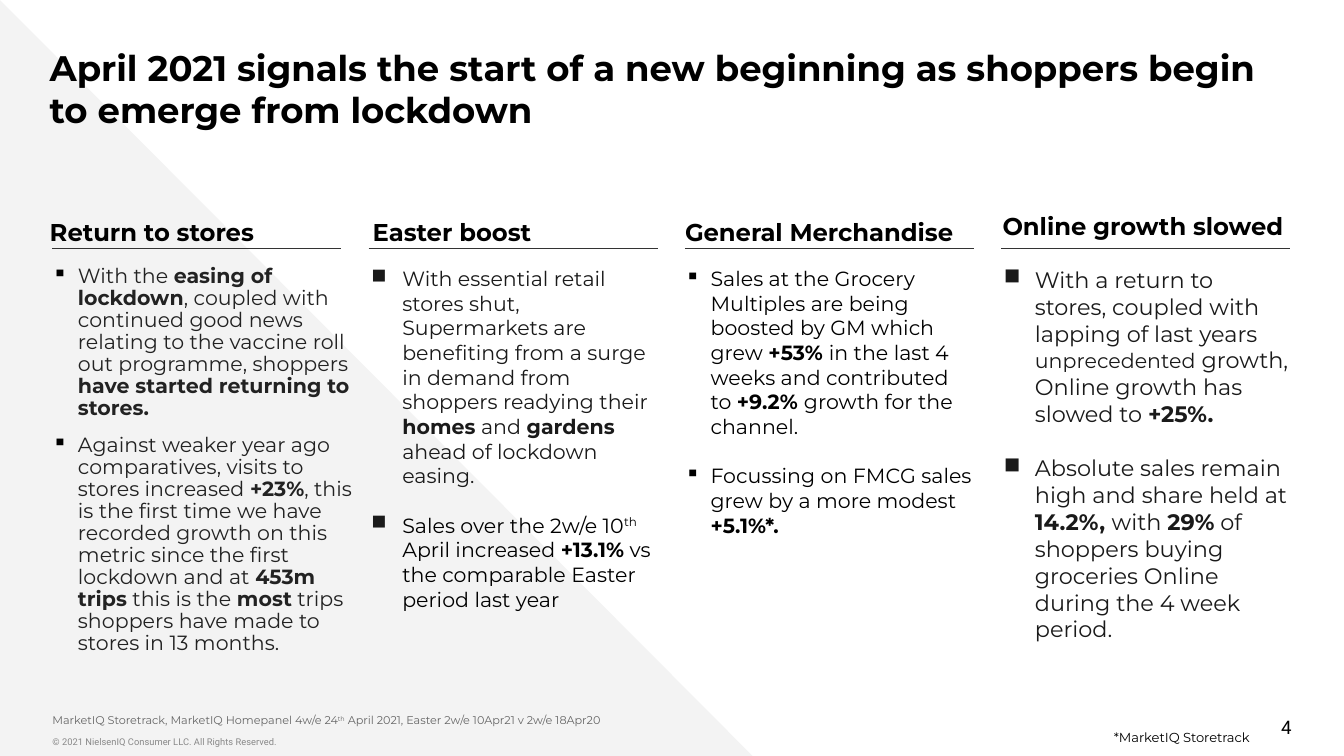
from dataclasses import dataclass
from typing import NamedTuple, Optional

from lxml.etree import SubElement
from pptx import Presentation
from pptx.dml.color import RGBColor
from pptx.enum.shapes import MSO_CONNECTOR as Connector, MSO_SHAPE as Preset
from pptx.enum.text import MSO_ANCHOR as Anchor, PP_ALIGN as Align
from pptx.oxml.ns import qn
from pptx.util import Inches, Pt

COLORS = {"black": "000000", "ink": "1A1A1A", "dark": "222222", "rule": "333333",
          "source": "666666", "legal": "888888", "wedge": "F3F3F3"}
WIDTH, HEIGHT = 10, 5.625
LEFT, RIGHT = 0.39, 9.6
COLUMN_WIDTH = 2.15
COLUMN_PITCH = (RIGHT - LEFT - COLUMN_WIDTH) / 3
RULE_TOP, HEADING_TOP, HEADING_HEIGHT, BODY_TOP, BODY_HEIGHT = 1.85, 1.6, 0.23, 1.93, 3.3


class Run(NamedTuple):
    text: str
    bold: bool = False
    size: Optional[float] = None
    raised: bool = False


def bold(text: str) -> Run:
    return Run(text, bold=True)


@dataclass
class Style:
    size: float
    color: str = "black"
    font: str = "Montserrat"
    align: Align = Align.LEFT
    anchor: Anchor = Anchor.TOP
    side_inset: float = 0
    inset: float = 0.05
    bullet: str = ""
    bullet_color: str = "black"
    indent: float = 0
    hanging: float = 0
    spacing: Optional[float] = None
    gap: float = 0


@dataclass
class Column:
    heading: str
    style: Style
    paragraphs: list
    heading_shift: float = 0
    heading_rise: float = 0
    extra_width: float = 0


def rgb(name: str) -> RGBColor:
    return RGBColor.from_string(COLORS[name])


def add_bullet(paragraph, style: Style) -> None:
    properties = paragraph._p.get_or_add_pPr()
    properties.set("marL", str(Inches(style.indent)))
    properties.set("indent", str(-Inches(style.hanging)))
    color = SubElement(properties, qn("a:buClr"))
    SubElement(color, qn("a:srgbClr")).set("val", COLORS[style.bullet_color])
    SubElement(properties, qn("a:buChar")).set("char", style.bullet)


def add_text(slide, left: float, top: float, width: float, height: float,
             paragraphs: list, style: Style) -> None:
    """Each paragraph is a list of Run; a run without a size takes the style's."""
    box = slide.shapes.add_textbox(*map(Inches, (left, top, width, height)))
    frame = box.text_frame
    frame_format = {"word_wrap": True, "vertical_anchor": style.anchor,
                    "margin_left": Inches(style.side_inset),
                    "margin_right": Inches(style.side_inset),
                    "margin_top": Inches(style.inset),
                    "margin_bottom": Inches(style.inset)}
    for name, value in frame_format.items():
        setattr(frame, name, value)
    for index, runs in enumerate(paragraphs):
        paragraph = frame.add_paragraph() if index else frame.paragraphs[0]
        paragraph.alignment = style.align
        if style.spacing:
            paragraph.line_spacing = Pt(style.spacing)
        if index:
            paragraph.space_before = Pt(style.gap)
        if style.bullet:
            add_bullet(paragraph, style)
        for part in runs:
            run = paragraph.add_run()
            run.text = part.text
            font_format = {"name": style.font, "bold": part.bold,
                           "size": Pt(part.size or style.size)}
            for name, value in font_format.items():
                setattr(run.font, name, value)
            run.font.color.rgb = rgb(part_color(part, paragraphs, index, style))
            if part.raised:
                run.font._element.set("baseline", "30000")


def part_color(part: Run, paragraphs: list, index: int, style: Style) -> str:
    """The Easter result, like the rest of its figures, is pure black."""
    return "black" if paragraphs[index] is EASTER_RESULT else style.color


def add_rule(slide, left: float) -> None:
    rule = slide.shapes.add_connector(
        Connector.STRAIGHT, *map(Inches, (left, RULE_TOP, left + COLUMN_WIDTH, RULE_TOP)))
    rule.line.color.rgb = rgb("rule")
    rule.line.width = Pt(0.75)
    SubElement(rule._element.spPr, qn("a:effectLst"))


def add_column(slide, index: int, column: Column) -> None:
    left = LEFT + index * COLUMN_PITCH
    add_rule(slide, left)
    add_text(slide, left + column.heading_shift, HEADING_TOP - column.heading_rise,
             COLUMN_WIDTH, HEADING_HEIGHT, [[bold(column.heading)]], HEADING)
    add_text(slide, left, BODY_TOP, COLUMN_WIDTH + column.extra_width, BODY_HEIGHT,
             column.paragraphs, column.style)


HEADING = Style(13, anchor=Anchor.BOTTOM, inset=0)
SMALL_SQUARE = {"bullet": "▪", "indent": 0.19, "hanging": 0.19}
LARGE_SQUARE = {"bullet": "■", "indent": 0.25, "hanging": 0.23,
                "color": "ink", "bullet_color": "ink"}
EASTER_RESULT = [Run("Sales over the 2w/e 10"), Run("th", raised=True),
                 Run(" April increased "), bold("+13.1%"),
                 Run(" vs the comparable Easter period last year")]

COLUMNS = [
    Column("Return to stores", Style(11, "dark", spacing=11.8, gap=8, **SMALL_SQUARE), [
        [Run("With the "), bold("easing of lockdown"),
         Run(", coupled with continued good news relating to the vaccine roll out "
             "programme, shoppers "), bold("have started returning to stores.")],
        [Run("Against weaker year ago comparatives, visits to stores increased "),
         bold("+23%"),
         Run(", this is the first time we have recorded growth on this metric since "
             "the first lockdown and at "), bold("453m trips"), Run(" this is the "),
         bold("most"), Run(" trips shoppers have made to stores in 13 months.")],
    ], heading_shift=-0.02, extra_width=0.08),
    Column("Easter boost", Style(11, gap=13.2, **LARGE_SQUARE), [
        [Run("With essential retail stores shut, Supermarkets are benefiting from a "
             "surge in demand from shoppers readying their "), bold("homes"),
         Run(" and "), bold("gardens"), Run(" ahead of lockdown easing.")],
        EASTER_RESULT,
    ], heading_shift=0.03),
    Column("General Merchandise", Style(11, gap=13.2, **SMALL_SQUARE), [
        [Run("Sales at the Grocery Multiples are being boosted by GM which grew "),
         bold("+53% "), Run("in the last 4 weeks and contributed to "),
         bold("+9.2% "), Run("growth for the channel.")],
        [Run("Focussing on FMCG sales grew by a more modest "), bold("+5.1%*.")],
    ]),
    Column("Online growth slowed", Style(12, gap=14.5, **LARGE_SQUARE), [
        [Run("With a return to stores, coupled with lapping of last years "),
         Run("unprecedented", size=11), Run(" growth, Online growth has slowed to "),
         bold("+25%.")],
        [Run("Absolute sales remain high and share held at "), bold("14.2%, "),
         Run("with "), bold("29%"),
         Run(" of shoppers buying groceries Online during the 4 week period.")],
    ], heading_shift=0.01, heading_rise=0.04),
]


def main() -> None:
    presentation = Presentation()
    presentation.slide_width, presentation.slide_height = Inches(WIDTH), Inches(HEIGHT)
    slide = presentation.slides.add_slide(presentation.slide_layouts[6])

    wedge = slide.shapes.add_shape(Preset.RIGHT_TRIANGLE, 0, 0,
                                   Inches(0.56 * WIDTH), Inches(HEIGHT))
    wedge.shadow.inherit = False
    wedge.fill.solid()
    wedge.fill.fore_color.rgb = rgb("wedge")
    wedge.line.fill.background()

    add_text(slide, 0.37, 0.24, 9.22, 0.85, [[bold(
        "April 2021 signals the start of a new beginning as shoppers begin to emerge "
        "from lockdown")]], Style(19, inset=0.1))
    for index, column in enumerate(COLUMNS):
        add_column(slide, index, column)

    add_text(slide, LEFT, 5.21, 7, 0.2, [[
        Run("MarketIQ Storetrack, MarketIQ Homepanel 4w/e 24"), Run("th", raised=True),
        Run(" April 2021, Easter 2w/e 10Apr21 v 2w/e 18Apr20")]],
        Style(6, "source", anchor=Anchor.BOTTOM, inset=0))
    add_text(slide, LEFT, 5.43, 5.54, 0.19, [[
        Run("© 2021 NielsenIQ Consumer LLC. All Rights Reserved.")]],
        Style(5, "legal", "Roboto"))
    add_text(slide, 7.36, 5.26, 2.25, 0.3, [[Run("4")]],
             Style(10, font="Roboto", align=Align.RIGHT, anchor=Anchor.MIDDLE))
    add_text(slide, 8.19, 5.38, 1.28, 0.22, [[Run("*MarketIQ Storetrack")]],
             Style(7, side_inset=0.1))
    presentation.save("out.pptx")


if __name__ == "__main__":
    main()
